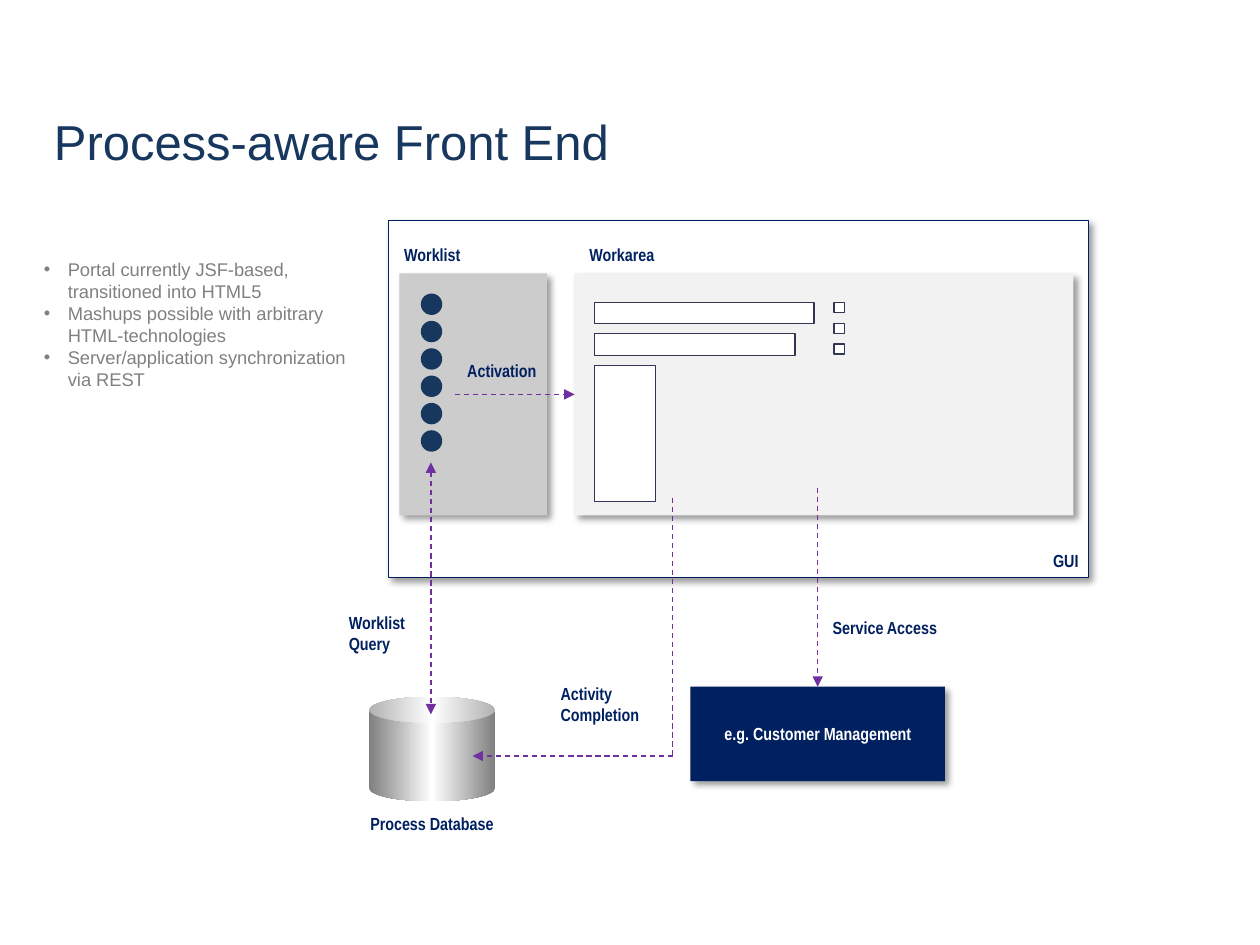
import pptx
import pptx.util
import pptx.dml.color
import pptx.enum.dml
import pptx.enum.shapes
import pptx.enum.text
import pptx.oxml
import pptx.oxml.ns

Inches, Pt = pptx.util.Inches, pptx.util.Pt
KIND = pptx.enum.shapes.MSO_SHAPE
NS = pptx.oxml.ns.nsdecls("a")

NAVY, BLUE, PURPLE, EDGE = "002060", "17375E", "7030A0", "323655"
LABEL = {"name": "Arial Narrow", "size": Pt(10), "bold": True}
TITLE = {"name": "Arial", "size": Pt(28), "bold": False}
BODY = {"name": "Arial", "size": Pt(10.5), "bold": False}

POINTS = [
    "Portal currently JSF-based,\vtransitioned into HTML5",
    "Mashups possible with arbitrary\vHTML-technologies",
    "Server/application synchronization\vvia REST",
]
# text, (left, top, width, height)
LABELS = [
    ("GUI", (8.26, 4.32, 0.4, 0.27)),
    ("Worklist", (3.11, 1.89, 0.65, 0.27)),
    ("Workarea", (4.58, 1.89, 0.72, 0.27)),
    ("Activation", (3.61, 2.81, 0.75, 0.27)),
    ("Service Access", (6.51, 4.85, 1.03, 0.27)),
    ("Process Database", (2.84, 6.4, 1.18, 0.27)),
    ("Worklist\nQuery", (2.67, 4.81, 0.65, 0.43)),
    ("Activity\vCompletion", (4.35, 5.37, 0.85, 0.43)),
]
# box, fill, line colour
PANELS = {
    "gui": ((3.08, 1.75, 5.56, 2.83), "FFFFFF", NAVY),
    "list": ((3.17, 2.17, 1.17, 1.92), "CCCCCC", None),
    "area": ((4.56, 2.17, 3.96, 1.92), "F2F2F2", None),
    "service": ((5.48, 5.45, 2.02, 0.75), NAVY, None),
}
FIELDS = [(4.72, 2.4, 1.74, 0.17), (4.72, 2.65, 1.59, 0.17), (4.72, 2.9, 0.48, 1.08)]
CHECKS, TASKS = 3, 6
DRUM = (2.93, 5.53, 1, 0.83)
STOPS = [(0, "808080"), (50, "FFFFFF"), (100, "808080")]

deck = pptx.Presentation()
deck.slide_width, deck.slide_height = Inches(10), Inches(7.5)
slide = deck.slides.add_slide(deck.slide_layouts[6])


def rgb(code):
    return pptx.dml.color.RGBColor.from_string(code)


def add_xml(parent, tag, inner=""):
    parent.append(pptx.oxml.parse_xml(f"<a:{tag} {NS}{inner}"))


def style(para, form, color):
    for key, value in form.items():
        setattr(para.font, key, value)
    para.font.color.rgb = rgb(color)


def shape(kind, box, fill=None, line=None, width=0.75):
    item = slide.shapes.add_shape(kind, *map(Inches, box))
    item.shadow.inherit = False
    if fill:
        item.fill.solid()
        item.fill.fore_color.rgb = rgb(fill)
    if line:
        item.line.color.rgb = rgb(line)
        item.line.width = Pt(width)
    else:
        item.line.fill.background()
    return item


def panel(box, fill, line):
    """Add a rectangle with a soft shadow to the lower right."""
    item = shape(KIND.RECTANGLE, box, fill, line, 0.5)
    effect = item._element.spPr.find(pptx.oxml.ns.qn("a:effectLst"))
    add_xml(effect, "outerShdw",
            f' blurRad="{Pt(4)}" dist="{Pt(3)}" dir="2700000" algn="tl" rotWithShape="0">'
            '<a:srgbClr val="000000"><a:alpha val="40000"/></a:srgbClr></a:outerShdw>')
    return item


def text(words, box, form=LABEL, color=NAVY, wrap=False):
    frame = slide.shapes.add_textbox(*map(Inches, box)).text_frame
    frame.word_wrap = wrap
    if not wrap:
        frame.auto_size = pptx.enum.text.MSO_AUTO_SIZE.SHAPE_TO_FIT_TEXT
    frame.text = words
    for para in frame.paragraphs:
        style(para, form, color)
    return frame


def arrow(start, end, head=False, tail=True):
    """Add a dashed line; head and tail put arrowheads at start and end."""
    item = slide.shapes.add_connector(
        pptx.enum.shapes.MSO_CONNECTOR.STRAIGHT, *map(Inches, start + end))
    item.line.color.rgb = rgb(PURPLE)
    item.line.width = Pt(0.75)
    item.line.dash_style = pptx.enum.dml.MSO_LINE.DASH
    for tag, shown in (("headEnd", head), ("tailEnd", tail)):
        if shown:
            add_xml(item.line._get_or_add_ln(), tag, ' type="triangle"/>')
    add_xml(item._element.spPr, "effectLst", "/>")
    return item


def main():
    title = text("Process-aware Front End", (0.33, 0.83, 8.83, 0.58), TITLE, BLUE, True)
    title.vertical_anchor = pptx.enum.text.MSO_ANCHOR.MIDDLE

    made = {name: panel(*row) for name, row in PANELS.items()}
    frame = made["service"].text_frame
    frame.word_wrap = False
    frame.vertical_anchor = pptx.enum.text.MSO_ANCHOR.MIDDLE
    frame.text = "e.g. Customer Management"
    frame.paragraphs[0].alignment = pptx.enum.text.PP_ALIGN.CENTER
    style(frame.paragraphs[0], LABEL, "FFFFFF")

    checks = [(6.62, 2.4 + 0.165 * i, 0.08, 0.08) for i in range(CHECKS)]
    for box in FIELDS + checks:
        shape(KIND.RECTANGLE, box, "FFFFFF", EDGE)

    drum = shape(KIND.CAN, DRUM)
    stops = "".join(f'<a:gs pos="{at * 1000}"><a:srgbClr val="{code}"/></a:gs>'
                    for at, code in STOPS)
    drum._element.spPr.insert(2, pptx.oxml.parse_xml(
        f'<a:gradFill {NS} rotWithShape="1"><a:gsLst>{stops}</a:gsLst>'
        '<a:lin ang="0" scaled="0"/></a:gradFill>'))

    for i in range(TASKS):
        shape(KIND.OVAL, (3.34, 2.33 + 0.217 * i, 0.17, 0.17), BLUE)

    arrow((3.61, 3.13), (4.56, 3.13)).end_connect(made["area"], 1)
    arrow((6.49, 3.87), (6.49, 5.45)).end_connect(made["service"], 0)
    arrow((3.42, 3.67), (3.42, 5.67), head=True)
    arrow((5.34, 3.95), (5.34, 6), tail=False)
    arrow((5.34, 6), (3.75, 6))

    for words, box in LABELS:
        text(words, box)

    body = text("\n".join(POINTS), (0.25, 2, 2.68, 1.16), BODY, "808080")
    for para in body.paragraphs:
        props = para._p.get_or_add_pPr()
        props.set("marL", str(Inches(0.19)))
        props.set("indent", str(-Inches(0.19)))
        for old in list(props):
            props.remove(old)
        add_xml(props, "buFont", ' typeface="Arial"/>')
        add_xml(props, "buChar", ' char="•"/>')
        style(para, BODY, "808080")

    deck.save("out.pptx")


if __name__ == "__main__":
    main()
